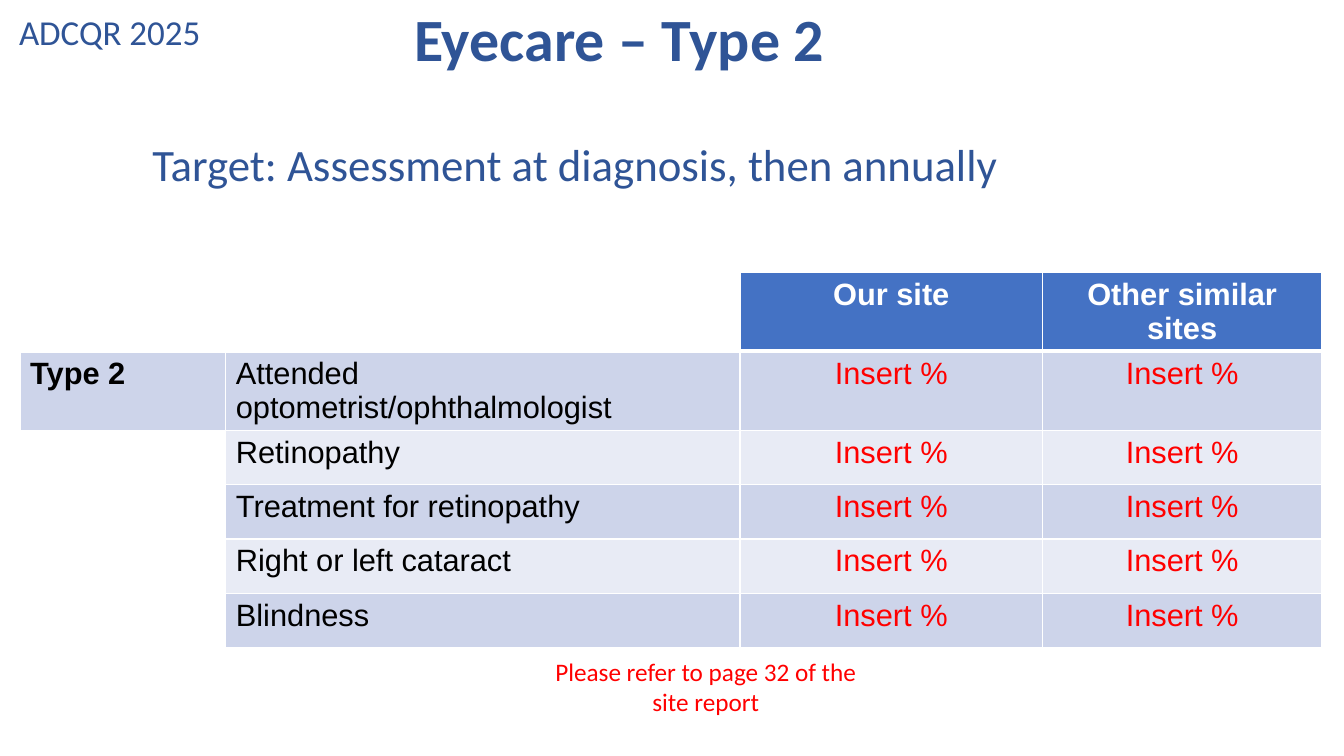
from dataclasses import dataclass

from lxml import etree
from pptx import Presentation
from pptx import util as u
from pptx.dml.color import RGBColor
from pptx.enum import text
from pptx.oxml import ns

PX = 9144


@dataclass(frozen=True)
class Theme:
    navy: str = "2F5496"
    header: str = "4472C4"
    band_dark: str = "CDD4EA"
    band_light: str = "E8EBF5"
    white: str = "FFFFFF"
    black: str = "000000"
    red: str = "FF0000"
    heading_font: str = "Calibri"
    table_font: str = "Arial"
    title_size: float = 42.8
    target_size: int = 32
    tag_size: int = 25
    table_size: int = 22
    note_size: int = 18


THEME = Theme()
LEFT, CENTER = text.PP_ALIGN.LEFT, text.PP_ALIGN.CENTER


@dataclass(frozen=True)
class Style:
    font: str
    size: float
    color: str
    bold: bool = False
    align: text.PP_ALIGN = LEFT
    spacing: float = 1.0


@dataclass(frozen=True)
class Label:
    words: str
    left: int
    top: int
    width: int
    height: int
    style: Style
    inset_left: int = 10
    inset_top: int = 5


LABELS = (
    Label("Eyecare – Type 2", 401, 16, 461, 109,
          Style(THEME.heading_font, THEME.title_size, THEME.navy, bold=True, spacing=0.7)),
    Label("Target: Assessment at diagnosis, then annually", 132, 131, 1151, 64,
          Style(THEME.heading_font, THEME.target_size, THEME.navy), inset_left=19),
    Label("ADCQR 2025", 9, 5, 209, 52,
          Style(THEME.heading_font, THEME.tag_size, THEME.navy)),
    Label("Please refer to page 32 of the site report", 536, 641, 328, 81,
          Style(THEME.heading_font, THEME.note_size, THEME.red, align=CENTER), inset_top=10),
)

HEADERS = ("", "", "Our site", "Other similar sites")
MEASURES = (
    "Attended optometrist/ophthalmologist",
    "Retinopathy",
    "Treatment for retinopathy",
    "Right or left cataract",
    "Blindness",
)
COLUMN_WIDTHS = (204, 510, 300, 277)
ROW_HEIGHT = 54
TABLE_LEFT, TABLE_TOP = 20, 270

HEADER_STYLE = Style(THEME.table_font, THEME.table_size, THEME.white, bold=True, align=CENTER)
GROUP_STYLE = Style(THEME.table_font, THEME.table_size, THEME.black, bold=True)
MEASURE_STYLE = Style(THEME.table_font, THEME.table_size, THEME.black)
VALUE_STYLE = Style(THEME.table_font, THEME.table_size, THEME.red, align=CENTER)


def px(length: int) -> u.Emu:
    """Turn a length in px into EMU."""
    return u.Emu(length * PX)


def write(frame, words: str, style: Style) -> None:
    """Put one styled run into the first paragraph of a text frame."""
    para = frame.paragraphs[0]
    para.alignment = style.align
    para.line_spacing = style.spacing
    span = para.add_run()
    span.text = words
    span.font.name = style.font
    span.font.size = u.Pt(style.size)
    span.font.bold = style.bold
    span.font.color.rgb = RGBColor.from_string(style.color)


def draw_label(page, label: Label) -> None:
    """Draw one wrapped text box."""
    box = page.shapes.add_textbox(px(label.left), px(label.top), px(label.width), px(label.height))
    frame = box.text_frame
    frame.word_wrap = True
    frame.margin_left, frame.margin_right = px(label.inset_left), px(10)
    frame.margin_top = frame.margin_bottom = px(label.inset_top)
    write(frame, label.words, label.style)


def set_borders(cell, top: int, bottom: int) -> None:
    """Give a cell white borders, with widths in points."""
    properties = cell._tc.get_or_add_tcPr()
    for side, width in (("lnL", 1), ("lnR", 1), ("lnT", top), ("lnB", bottom)):
        line = etree.SubElement(properties, ns.qn(f"a:{side}"), w=str(u.Pt(width)))
        fill = etree.SubElement(line, ns.qn("a:solidFill"))
        etree.SubElement(fill, ns.qn("a:srgbClr"), val=THEME.white)


def fill_cell(cell, words: str, style: Style, color: str, row: int) -> None:
    """Set the borders, fill and text of a table cell."""
    set_borders(cell, top=3 if row == 1 else 1, bottom=3 if row == 0 else 1)
    cell.fill.solid()
    cell.fill.fore_color.rgb = RGBColor.from_string(color if words else THEME.white)
    cell.margin_left = cell.margin_right = px(10)
    cell.margin_top = cell.margin_bottom = px(5)
    if words:
        write(cell.text_frame, words, style)


def draw_table(page) -> None:
    """Draw the eyecare results table."""
    rows = len(MEASURES) + 1
    table = page.shapes.add_table(
        rows, len(COLUMN_WIDTHS), px(TABLE_LEFT), px(TABLE_TOP),
        px(sum(COLUMN_WIDTHS)), px(rows * ROW_HEIGHT)).table
    table.horz_banding = False
    for column, width in zip(table.columns, COLUMN_WIDTHS):
        column.width = px(width)
    for column, words in enumerate(HEADERS):
        fill_cell(table.cell(0, column), words, HEADER_STYLE, THEME.header, 0)
    styles = (GROUP_STYLE, MEASURE_STYLE, VALUE_STYLE, VALUE_STYLE)
    for row, measure in enumerate(MEASURES, start=1):
        color = THEME.band_dark if row % 2 else THEME.band_light
        group = "Type 2" if row == 1 else ""
        for column, words in enumerate((group, measure, "Insert %", "Insert %")):
            fill_cell(table.cell(row, column), words, styles[column], color, row)


def main() -> None:
    """Build and save the deck."""
    deck = Presentation()
    deck.slide_width, deck.slide_height = px(1333), px(750)
    page = deck.slides.add_slide(deck.slide_layouts[6])
    draw_table(page)
    for label in LABELS:
        draw_label(page, label)
    deck.save("out.pptx")


if __name__ == "__main__":
    main()
